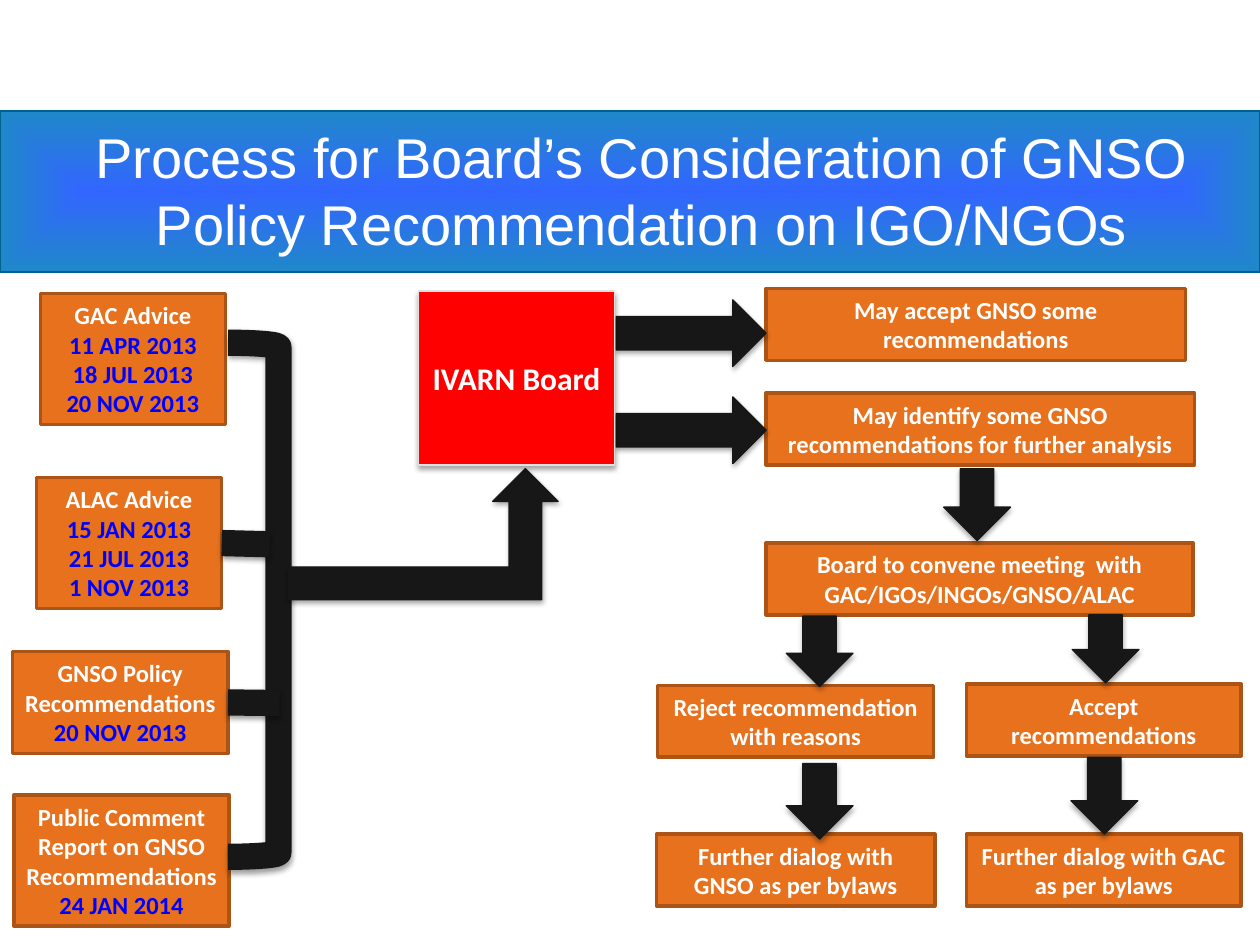
from lxml.etree import SubElement, fromstring
from pptx import Presentation
from pptx.dml.color import RGBColor
from pptx.enum.shapes import MSO_CONNECTOR, MSO_SHAPE as Preset
from pptx.enum.text import MSO_ANCHOR as Anchor, PP_ALIGN as Align
from pptx.oxml.ns import qn
from pptx.util import Inches, Pt

WHITE = RGBColor(0xFF, 0xFF, 0xFF)
ORANGE = RGBColor(0xE7, 0x71, 0x1C)
BROWN = RGBColor(0xAB, 0x54, 0x15)
DATE_BLUE = RGBColor(0x00, 0x00, 0xFF)
BLACK = RGBColor(0x17, 0x17, 0x17)
RED = RGBColor(0xFF, 0x00, 0x00)
PALE_GREY = RGBColor(0xE1, 0xE1, 0xE1)
BAR_EDGE = RGBColor(0x00, 0x61, 0x8E)

presentation = Presentation()
presentation.slide_width, presentation.slide_height = Inches(10), Inches(7.5)
slide = presentation.slides.add_slide(presentation.slide_layouts[5])
shapes = slide.shapes

# The grid has 100 columns and 75 rows of square cells
CELL = presentation.slide_width // 100


def add_box(preset, place, fill, edge, weight, lines=(), size=14, side_inset=1):
    """Add a shape at (column, row, columns, rows) with (text, colour) lines."""
    shape = shapes.add_shape(preset, *(round(value * CELL) for value in place))
    shape.shadow.inherit = False
    if fill is None:
        shape.fill.background()
    else:
        shape.fill.solid()
        shape.fill.fore_color.rgb = fill
    shape.line.color.rgb = edge
    shape.line.width = Pt(weight)
    frame = shape.text_frame
    frame.word_wrap = True
    frame.vertical_anchor = Anchor.MIDDLE
    frame.margin_left = frame.margin_right = round(side_inset * CELL)
    for index, (text, color) in enumerate(lines):
        paragraph = frame.add_paragraph() if index else frame.paragraphs[0]
        paragraph.alignment = Align.CENTER
        run = paragraph.add_run()
        run.text = text
        run.font.name, run.font.size, run.font.bold = "Calibri", Pt(size), True
        run.font.color.rgb = color
    return shape


def add_shadow(shape, distance, opacity):
    """Give a shape or connector a soft shadow straight below it."""
    properties = shape._element.spPr
    effects = properties.find(qn("a:effectLst"))
    if effects is None:
        effects = SubElement(properties, qn("a:effectLst"))
    shadow = SubElement(effects, qn("a:outerShdw"), blurRad=str(Pt(3.1)),
                        dist=str(Pt(distance)), dir="5400000", rotWithShape="0")
    color = SubElement(shadow, qn("a:srgbClr"), val="000000")
    SubElement(color, qn("a:alpha"), val=str(opacity * 1000))


# Title bar with a gradient that spreads from its centre
bar = add_box(Preset.RECTANGLE, (0, 8.8, 100, 12.8), WHITE, BAR_EDGE, 0.75)
solid = bar._element.spPr.find(qn("a:solidFill"))
bar._element.spPr.replace(solid, fromstring(
    '<a:gradFill xmlns:a="http://schemas.openxmlformats.org/drawingml/2006/main">'
    '<a:gsLst><a:gs pos="0"><a:srgbClr val="3366FF"/></a:gs>'
    '<a:gs pos="100000"><a:srgbClr val="1F88C8"/></a:gs></a:gsLst>'
    '<a:path path="rect"><a:fillToRect l="50000" t="50000" r="50000" b="50000"/>'
    '</a:path></a:gradFill>'))

# Title, in front of the bar
title = shapes.title
bar._element.addnext(title._element)
title.left, title.top, title.width, title.height = (
    round(value * CELL) for value in (1.9, 9, 98.1, 12.1))
title.text_frame.word_wrap = True
title.text_frame.vertical_anchor = Anchor.MIDDLE
paragraph = title.text_frame.paragraphs[0]
paragraph.alignment = Align.CENTER
run = paragraph.add_run()
run.text = "Process for Board’s Consideration of GNSO Policy Recommendation on IGO/NGOs"
run.font.name, run.font.size = "Arial", Pt(32)
run.font.color.rgb = WHITE

# Inputs: a white heading above blue dates
inputs = [
    ((3.2, 23.3, 14.7, 10.4), "GAC Advice",
     ["11 APR 2013", "18 JUL 2013", "20 NOV 2013"]),
    ((2.9, 37.9, 14.7, 10.4), "ALAC Advice",
     ["15 JAN 2013", "21 JUL 2013", "1 NOV 2013"]),
    ((1, 51.7, 17.1, 8.1), "GNSO Policy Recommendations", ["20 NOV 2013"]),
    ((1.1, 63.1, 17.1, 10.4), "Public Comment Report on GNSO Recommendations",
     ["24 JAN 2014"]),
]
input_boxes = []
for place, heading, dates in inputs:
    lines = [(heading, WHITE)] + [(date, DATE_BLUE) for date in dates]
    input_boxes.append(add_box(Preset.RECTANGLE, place, ORANGE, BROWN, 2, lines,
                               side_inset=0.5))

# Outcomes
outcomes = [
    ((76.7, 66.2, 21.8), ["Further dialog with GAC as per bylaws"]),
    ((52.1, 66.2, 22.1), ["Further dialog with GNSO as per bylaws"]),
    ((76.7, 54.3, 21.8), ["Accept recommendations"]),
    ((52.2, 54.4, 21.9), ["Reject recommendation with reasons"]),
    ((60.8, 43.1, 33.9), ["Board to convene meeting  with",
                          "GAC/IGOs/INGOs/GNSO/ALAC"]),
    ((60.8, 31.2, 34), ["May identify some GNSO recommendations for further analysis"]),
    ((60.8, 22.9, 33.3), ["May accept GNSO some recommendations"]),
]
for place, texts in outcomes:
    add_box(Preset.RECTANGLE, (*place, 5.7), ORANGE, BROWN, 2,
            [(text, WHITE) for text in texts])

# Bracket that gathers the inputs, with a branch from each middle box
bracket = add_box(Preset.RIGHT_BRACKET, (18.1, 27.2, 4, 40.8), None, BLACK, 15)
add_shadow(bracket, 1.6, 38)
for box, end_column, end_row in ((input_boxes[1], 21.4, 43.2),
                                 (input_boxes[2], 22.2, 55.8)):
    branch = shapes.add_connector(MSO_CONNECTOR.STRAIGHT, 0, 0,
                                  round(end_column * CELL), round(end_row * CELL))
    branch.begin_connect(box, 3)
    branch.line.color.rgb = BLACK
    branch.line.width = Pt(15)
    add_shadow(branch, 1.6, 38)

# Block arrows
arrows = [
    (Preset.DOWN_ARROW, (74.9, 37.2, 5.3, 5.7)),
    (Preset.DOWN_ARROW, (62.4, 48.9, 5.3, 5.6)),
    (Preset.DOWN_ARROW, (85.1, 48.8, 5.3, 5.4)),
    (Preset.DOWN_ARROW, (62.4, 60.6, 5.3, 6)),
    (Preset.DOWN_ARROW, (85, 60.1, 5.3, 6.1)),
    (Preset.BENT_UP_ARROW, (22.9, 37.2, 21.4, 10.4)),
    (Preset.RIGHT_ARROW, (48.9, 23.8, 11.9, 5.3)),
    (Preset.RIGHT_ARROW, (48.9, 31.5, 11.9, 5.3)),
]
for preset, place in arrows:
    add_shadow(add_box(preset, place, BLACK, BLACK, 0.75), 1.8, 35)

# Board
board = add_box(Preset.RECTANGLE, (33.2, 23.1, 15.6, 13.8), RED, PALE_GREY, 0.75,
                [("IVARN Board", WHITE)], size=18, side_inset=0.5)
add_shadow(board, 1.8, 35)

presentation.save("out.pptx")
